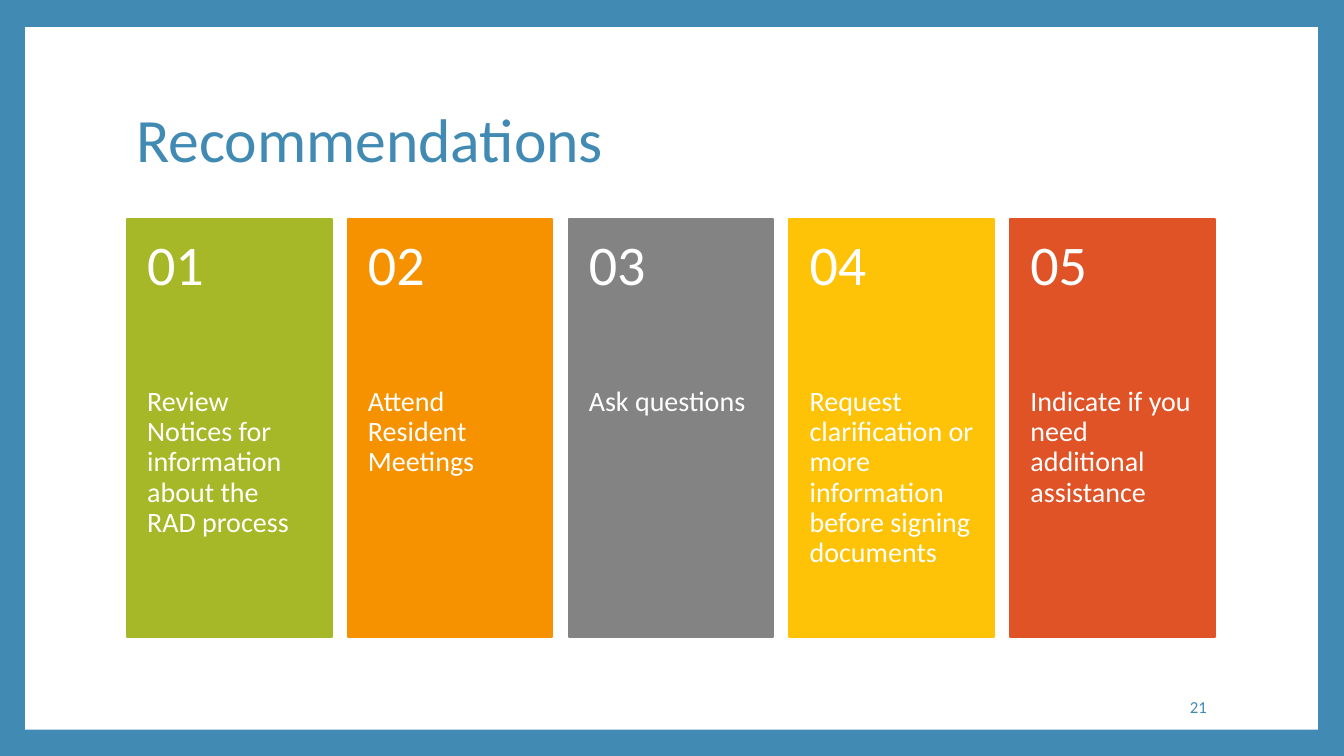
from dataclasses import dataclass

from pptx import Presentation
from pptx.dml.color import RGBColor
from pptx.enum.shapes import MSO_SHAPE
from pptx.enum.text import MSO_ANCHOR, MSO_AUTO_SIZE, PP_ALIGN
from pptx.shapes.autoshape import Shape
from pptx.shapes.group import GroupShape
from pptx.util import Inches, Pt

BLUE = RGBColor(0x41, 0x8A, 0xB3)
WHITE = RGBColor(0xFF, 0xFF, 0xFF)
GREEN = RGBColor(0xA6, 0xB7, 0x27)
ORANGE = RGBColor(0xF6, 0x92, 0x00)
GRAY = RGBColor(0x83, 0x83, 0x83)
YELLOW = RGBColor(0xFE, 0xC3, 0x06)
RED = RGBColor(0xDF, 0x53, 0x27)

FONT = "Calibri"
PANEL_LEFT, PANEL_TOP = 1.26, 2.17
PANEL_WIDTH, PANEL_HEIGHT = 2.03, 4.15
PANEL_PITCH = 2.19
ADVICE_TOP, ADVICE_HEIGHT = 3.84, 2.49
NUMBER_HEIGHT = 0.97


@dataclass(frozen=True)
class Recommendation:
    advice: str
    color: RGBColor


RECOMMENDATIONS = [
    Recommendation("Review Notices for information about the RAD process", GREEN),
    Recommendation("Attend Resident Meetings", ORANGE),
    Recommendation("Ask questions", GRAY),
    Recommendation("Request clarification or more information before signing documents", YELLOW),
    Recommendation("Indicate if you need additional assistance", RED),
]


def write_text(
    holder: Shape,
    text: str,
    *,
    size: float,
    color: RGBColor = WHITE,
    anchor: MSO_ANCHOR = MSO_ANCHOR.MIDDLE,
    align: PP_ALIGN = PP_ALIGN.LEFT,
    line_spacing: float = 0.9,
    insets: tuple[float, float, float, float] = (0.1, 0.05, 0.1, 0.05),
) -> None:
    frame = holder.text_frame
    frame.word_wrap = True
    frame.auto_size = MSO_AUTO_SIZE.NONE
    frame.vertical_anchor = anchor
    frame.margin_left, frame.margin_top, frame.margin_right, frame.margin_bottom = map(Inches, insets)
    paragraph = frame.paragraphs[0]
    paragraph.alignment = align
    paragraph.line_spacing = line_spacing
    run = paragraph.add_run()
    run.text = text
    run.font.name = FONT
    run.font.size = Pt(size)
    run.font.color.rgb = color


def draw_panel(panels: GroupShape, index: int, recommendation: Recommendation) -> None:
    left = Inches(PANEL_LEFT + index * PANEL_PITCH)
    width = Inches(PANEL_WIDTH)
    panel = panels.shapes.add_shape(
        MSO_SHAPE.RECTANGLE, left, Inches(PANEL_TOP), width, Inches(PANEL_HEIGHT)
    )
    panel.shadow.inherit = False
    panel.fill.solid()
    panel.fill.fore_color.rgb = recommendation.color
    panel.line.color.rgb = recommendation.color
    panel.line.width = Pt(1.5)

    advice = panels.shapes.add_textbox(left, Inches(ADVICE_TOP), width, Inches(ADVICE_HEIGHT))
    write_text(advice, recommendation.advice, size=20, anchor=MSO_ANCHOR.TOP, insets=(0.2, 0, 0.2, 0.36))

    number = panels.shapes.add_textbox(left, Inches(PANEL_TOP), width, Inches(NUMBER_HEIGHT))
    write_text(number, f"{index + 1:02d}", size=40, insets=(0.2, 0.18, 0.2, 0.18))


def main() -> None:
    presentation = Presentation()
    presentation.slide_width = Inches(13.33)
    presentation.slide_height = Inches(7.5)
    slide = presentation.slides.add_slide(presentation.slide_layouts[5])
    slide.background.fill.solid()
    slide.background.fill.fore_color.rgb = BLUE

    page = slide.shapes.add_shape(
        MSO_SHAPE.RECTANGLE, Inches(0.25), Inches(0.27), Inches(12.82), Inches(6.97)
    )
    page.shadow.inherit = False
    page.fill.solid()
    page.fill.fore_color.rgb = WHITE
    page.line.fill.background()

    title = slide.shapes.title
    title.left, title.top = Inches(1.25), Inches(0.67)
    title.width, title.height = Inches(10.8), Inches(1.48)
    write_text(title, "Recommendations", size=44, color=BLUE)
    slide.shapes._spTree.append(title._element)

    page_number = slide.shapes.add_textbox(Inches(10.2), Inches(6.81), Inches(1.87), Inches(0.4))
    write_text(page_number, "21", size=12, color=BLUE, align=PP_ALIGN.RIGHT, line_spacing=1.0)

    panels = slide.shapes.add_group_shape()
    for index, recommendation in enumerate(RECOMMENDATIONS):
        draw_panel(panels, index, recommendation)

    presentation.save("out.pptx")


if __name__ == "__main__":
    main()
